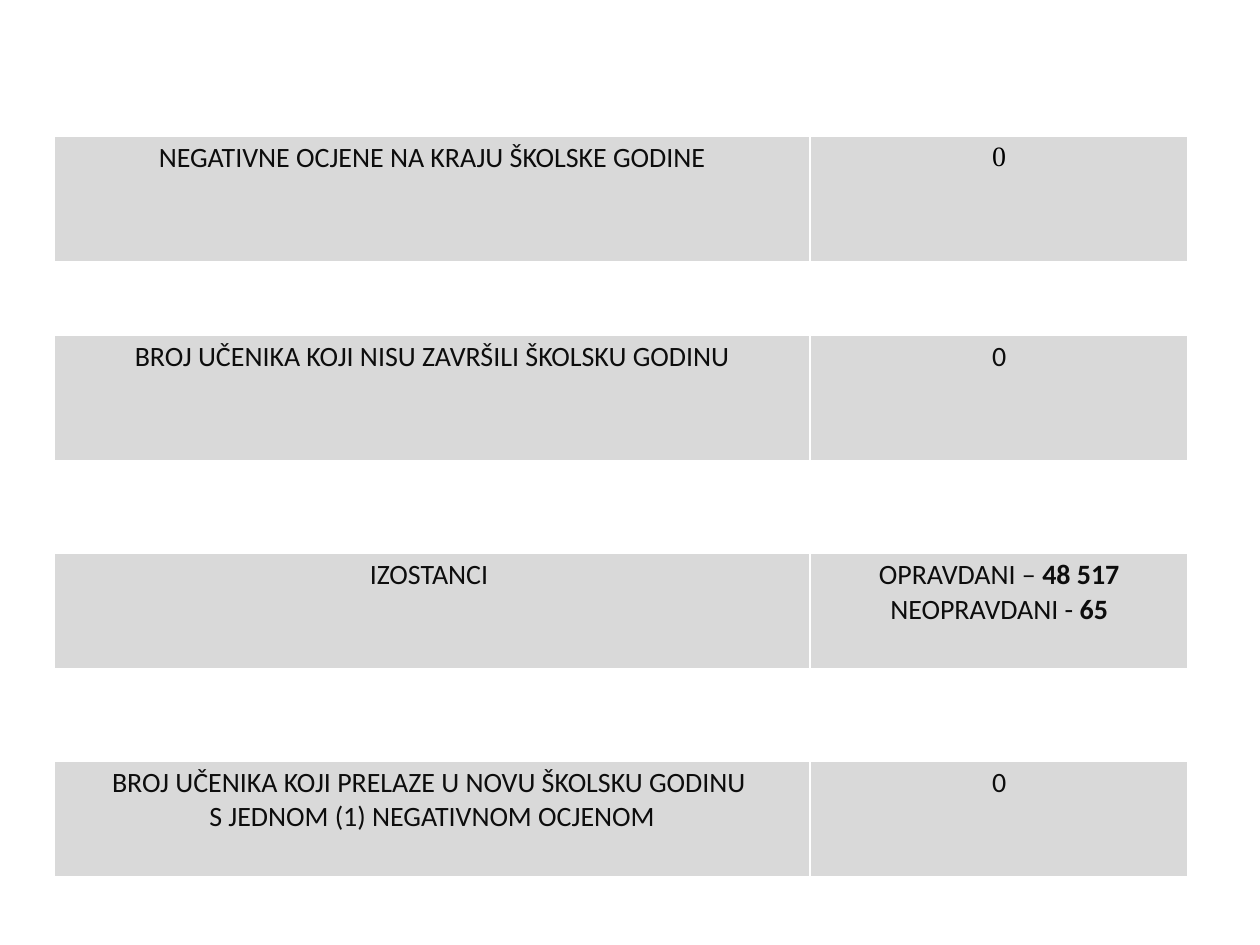
from lxml import etree
from pptx import Presentation
from pptx.dml.color import RGBColor
from pptx.enum.text import PP_ALIGN
from pptx.oxml.ns import qn
from pptx.util import Inches, Pt

COLORS = {"fill": "D9D9D9", "border": "FFFFFF", "text": "0D0D0D", "black": "000000"}
BORDERS = {"a:lnL": 0.96, "a:lnR": 0.96, "a:lnT": 3, "a:lnB": 3}

# Each table: top, height, label lines, value lines as (plain, bold) pairs
TABLES = [
    (1.07, 1.02, ["NEGATIVNE OCJENE NA KRAJU ŠKOLSKE GODINE"], [("0", "")]),
    (2.65, 1.02, ["BROJ UČENIKA KOJI NISU ZAVRŠILI ŠKOLSKU GODINU"], [("0", "")]),
    (6.03, 0.94, ["BROJ UČENIKA KOJI PRELAZE U NOVU ŠKOLSKU GODINU ",
                  "S JEDNOM (1) NEGATIVNOM OCJENOM"], [("0", "")]),
    (4.38, 0.94, ["IZOSTANCI "],
     [("OPRAVDANI – ", "48 517"), ("NEOPRAVDANI - ", "65")]),
]


def style_cell(cell):
    cell.margin_left = cell.margin_right = Inches(0.07)
    cell.margin_top = cell.margin_bottom = Inches(0.05)
    cell.fill.solid()
    cell.fill.fore_color.rgb = RGBColor.from_string(COLORS["fill"])
    properties = cell._tc.get_or_add_tcPr()
    # Border lines must come before the fill
    for position, (tag, width) in enumerate(BORDERS.items()):
        line = etree.Element(qn(tag), w=str(Pt(width)))
        solid = etree.SubElement(line, qn("a:solidFill"))
        etree.SubElement(solid, qn("a:srgbClr"), val=COLORS["border"])
        properties.insert(position, line)


def write_lines(cell, lines, font_name, color):
    frame = cell.text_frame
    for index, line in enumerate(lines):
        paragraph = frame.add_paragraph() if index else frame.paragraphs[0]
        paragraph.alignment = PP_ALIGN.CENTER
        for text, bold in zip(line, (False, True)):
            if text:
                run = paragraph.add_run()
                run.text = text
                run.font.name = font_name
                run.font.size = Pt(16)
                run.font.bold = bold
                run.font.color.rgb = RGBColor.from_string(color)


presentation = Presentation()
presentation.slide_width = Inches(10)
presentation.slide_height = Inches(7.5)
slide = presentation.slides.add_slide(presentation.slide_layouts[6])

# One single-row table per topic
for number, (top, height, label, values) in enumerate(TABLES):
    table = slide.shapes.add_table(
        1, 2, Inches(0.43), Inches(top), Inches(9), Inches(height)).table
    table.first_row = table.horz_banding = False
    table.columns[0].width = Inches(6)
    table.columns[1].width = Inches(3)
    for cell in table.iter_cells():
        style_cell(cell)
    write_lines(table.cell(0, 0), [(line, "") for line in label],
                "Calibri", COLORS["text"])
    # The first value is set in a serif face
    font_name, color = (("Calibri", COLORS["text"]) if number
                        else ("Times New Roman", COLORS["black"]))
    write_lines(table.cell(0, 1), values, font_name, color)

presentation.save("out.pptx")
